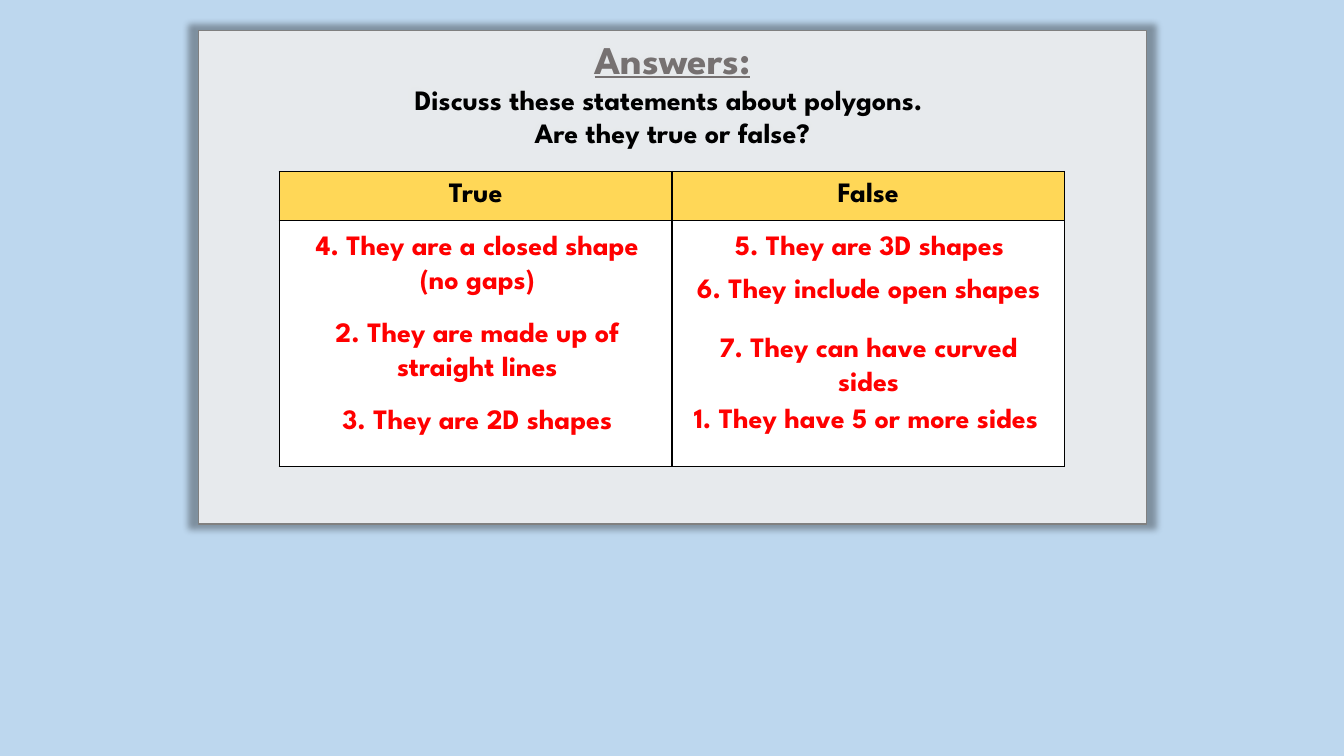
from pptx import Presentation, util as u
from pptx.dml.color import RGBColor
from pptx.enum import shapes, text
from pptx.oxml import parse_xml
from pptx.oxml.ns import nsdecls, qn

FONT = "League Spartan"
HUES = {"sky": "BDD7EE", "white": "FFFFFF", "edge": "808080", "title": "767171",
        "ink": "000000", "head": "FFD757", "answer": "FF0000"}

# text, left, top, width, height
ANSWERS = [
    ("4. They are a closed shape (no gaps)", 3.03, 2.21, 3.41, 0.77),
    ("2. They are made up of straight lines", 3.03, 3.07, 3.41, 0.77),
    ("3. They are 2D shapes", 3.03, 3.93, 3.41, 0.44),
    ("7. They can have curved sides", 6.91, 3.22, 3.41, 0.77),
    ("5. They are 3D shapes", 6.92, 2.21, 3.41, 0.44),
    ("6. They include open shapes", 6.64, 2.63, 3.95, 0.77),
    ("1. They have 5 or more sides", 6.65, 3.92, 3.88, 0.77),
]


def hue(name):
    return RGBColor.from_string(HUES[name])


def paint(fill, name):
    fill.solid()
    fill.fore_color.rgb = hue(name)


def write(para, words, size=20, color="ink", line=False):
    """Fill a paragraph with one centred bold run."""
    para.alignment = text.PP_ALIGN.CENTER
    run = para.add_run()
    run.text = words
    font = run.font
    font.name, font.size, font.bold = FONT, u.Pt(size), True
    font.underline = line
    font.color.rgb = hue(color)


def add_glow(shape):
    """Add a soft shadow slightly larger than the shape."""
    shape.shadow.inherit = False
    list_ = shape.element.spPr.find(qn("a:effectLst"))
    list_.append(parse_xml(
        f'<a:outerShdw {nsdecls("a")} blurRad="{u.Pt(5)}" sx="102000" sy="102000" '
        f'algn="ctr" rotWithShape="0"><a:srgbClr val="{HUES["ink"]}">'
        '<a:alpha val="40000"/></a:srgbClr></a:outerShdw>'))


def add_panel(slide):
    panel = slide.shapes.add_shape(
        shapes.MSO_SHAPE.RECTANGLE,
        u.Inches(1.97), u.Inches(0.3), u.Inches(9.4), u.Inches(4.9))
    paint(panel.fill, "white")
    tint = panel.element.spPr.find(qn("a:solidFill"))[0]
    tint.append(parse_xml(f'<a:alpha {nsdecls("a")} val="82000"/>'))
    panel.line.color.rgb = hue("edge")
    panel.line.width = u.Pt(1)
    add_glow(panel)
    frame = panel.text_frame
    frame.word_wrap = True
    frame.vertical_anchor = text.MSO_ANCHOR.TOP
    write(frame.paragraphs[0], "Answers:", size=28, color="title", line=True)
    write(frame.add_paragraph(), "Discuss these statements about polygons. ")
    write(frame.add_paragraph(), "Are they true or false?")


def add_edges(cell):
    props = cell._tc.get_or_add_tcPr()
    for side in ("lnL", "lnR", "lnT", "lnB"):
        props.append(parse_xml(
            f'<a:{side} {nsdecls("a")} w="{u.Pt(1)}"><a:solidFill>'
            f'<a:srgbClr val="{HUES["ink"]}"/></a:solidFill></a:{side}>'))


def add_grid(slide):
    table = slide.shapes.add_table(
        2, 2, u.Inches(2.77), u.Inches(1.7), u.Inches(7.79), u.Inches(2.93)).table
    for row, high in zip(table.rows, (0.49, 2.44)):
        row.height = u.Inches(high)
    for cell in table.iter_cells():
        add_edges(cell)
        paint(cell.fill, "white")
    for col, label in enumerate(("True", "False")):
        cell = table.cell(0, col)
        paint(cell.fill, "head")
        cell.vertical_anchor = text.MSO_ANCHOR.MIDDLE
        write(cell.text_frame.paragraphs[0], label)


def add_answer(slide, words, *place):
    box = slide.shapes.add_textbox(*map(u.Inches, place))
    frame = box.text_frame
    frame.word_wrap = True
    frame.auto_size = text.MSO_AUTO_SIZE.SHAPE_TO_FIT_TEXT
    write(frame.paragraphs[0], words, color="answer")


def main():
    deck = Presentation()
    deck.slide_width, deck.slide_height = u.Inches(13.33), u.Inches(7.5)
    slide = deck.slides.add_slide(deck.slide_layouts[6])
    paint(slide.background.fill, "sky")
    add_panel(slide)
    add_grid(slide)
    for answer in ANSWERS:
        add_answer(slide, *answer)
    deck.save("out.pptx")


if __name__ == "__main__":
    main()
